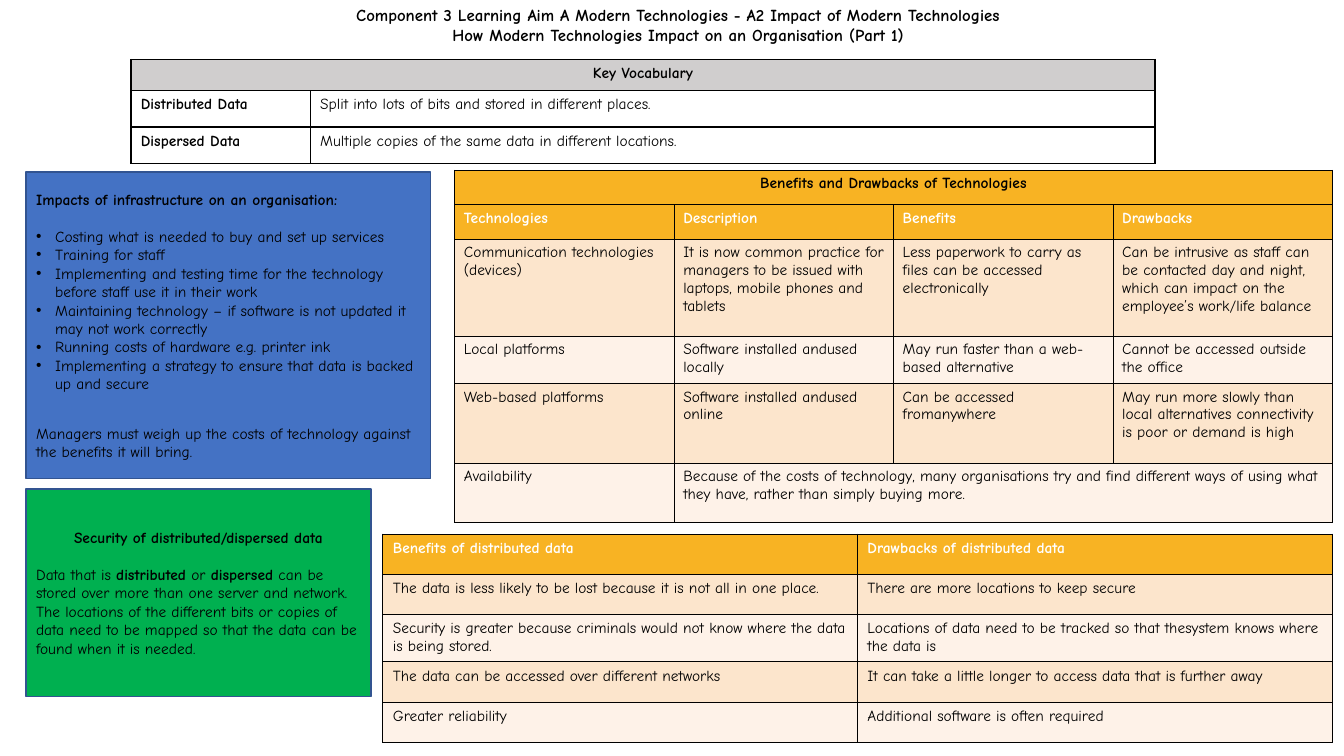
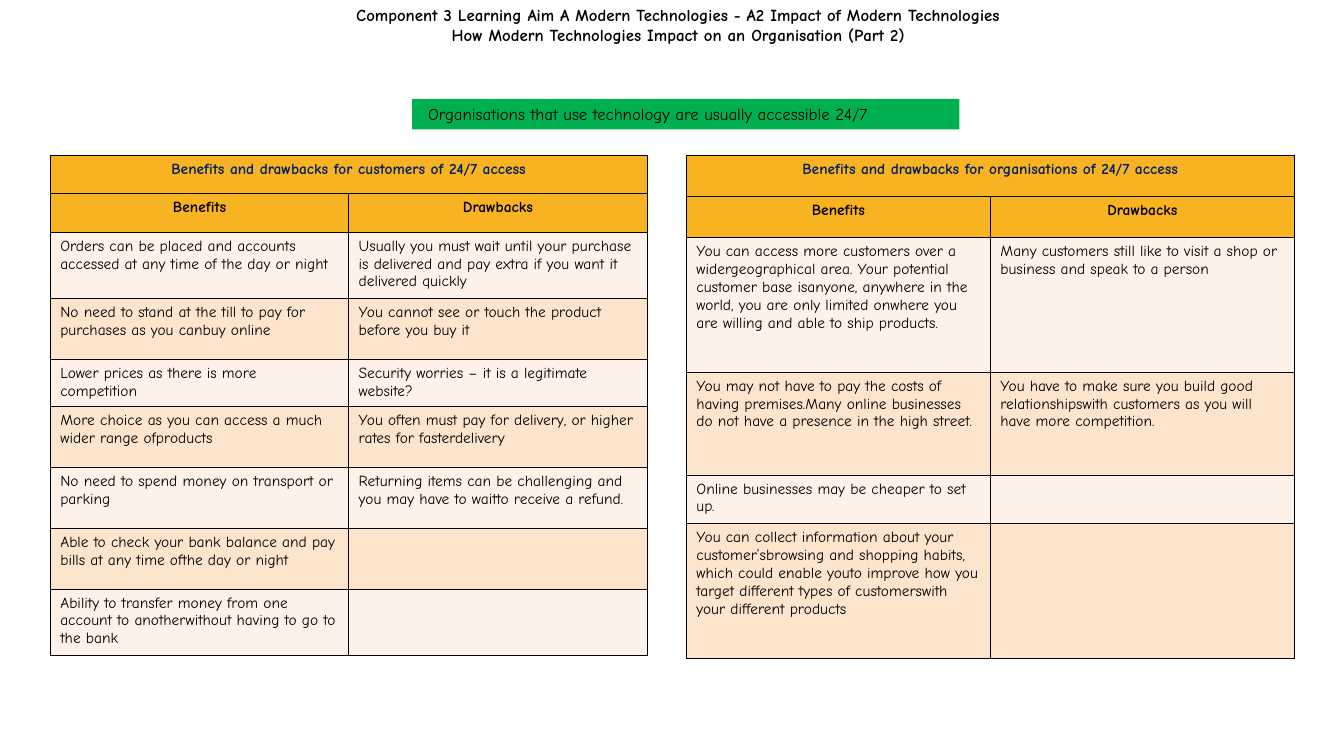
from collections import namedtuple

from lxml.etree import SubElement
from pptx import Presentation
from pptx.dml.color import RGBColor
from pptx.enum.shapes import MSO_SHAPE
from pptx.enum.text import MSO_ANCHOR, PP_ALIGN
from pptx.oxml import parse_xml
from pptx.oxml.ns import nsdecls, qn
from pptx.util import Cm, Pt

FONT = "Comic Neue"
TITLE_SIZE = 12
BODY_SIZE = 11

BLACK = RGBColor(0x00, 0x00, 0x00)
WHITE = RGBColor(0xFF, 0xFF, 0xFF)
NAVY = RGBColor(0x00, 0x20, 0x60)
GREY = RGBColor(0xD0, 0xCE, 0xCE)
AMBER = RGBColor(0xF8, 0xB3, 0x23)
PEACH = RGBColor(0xFC, 0xE5, 0xCC)
CREAM = RGBColor(0xFE, 0xF2, 0xE8)
BLUE = RGBColor(0x44, 0x72, 0xC4)
GREEN = RGBColor(0x00, 0xB0, 0x50)
OUTLINE = RGBColor(0x32, 0x54, 0x91)

RowStyle = namedtuple("RowStyle", "fill colour bold centred")
VOCABULARY_HEADING = RowStyle(GREY, BLACK, True, True)
BLACK_HEADING = RowStyle(AMBER, BLACK, True, True)
NAVY_HEADING = RowStyle(AMBER, NAVY, True, True)
WHITE_HEADING = RowStyle(AMBER, WHITE, True, False)
PLAIN_ROW = RowStyle(WHITE, BLACK, False, False)
PEACH_ROW = RowStyle(PEACH, BLACK, False, False)
CREAM_ROW = RowStyle(CREAM, BLACK, False, False)

VOCABULARY = [
    ["Key Vocabulary"],
    ["*Distributed Data*", "Split into lots of bits and stored in different places."],
    ["*Dispersed Data*", "Multiple copies of the same data in different locations."],
]
INFRASTRUCTURE_IMPACTS = [
    "Costing what is needed to buy and set up services",
    "Training for staff",
    "Implementing and testing time for the technology before staff use it in their work",
    "Maintaining technology – if software is not updated it may not work correctly",
    "Running costs of hardware e.g. printer ink",
    "Implementing a strategy to ensure that data is backed up and secure",
]
TECHNOLOGIES = [
    ["Benefits and Drawbacks of Technologies"],
    ["Technologies", "Description", "Benefits", "Drawbacks"],
    ["Communication technologies (devices)",
     "It is now common practice for managers to be issued with laptops, "
     "mobile phones and tablets",
     "Less paperwork to carry as files can be accessed electronically",
     "Can be intrusive as staff can be contacted day and night, which can "
     "impact on the employee’s work/life balance"],
    ["Local platforms", "Software installed andused locally",
     "May run faster than a web-based alternative",
     "Cannot be accessed outside the office"],
    ["Web-based platforms", "Software installed andused online",
     "Can be accessed fromanywhere",
     "May run more slowly than local alternatives connectivity is poor or "
     "demand is high"],
    ["Availability",
     "Because of the costs of technology, many organisations try and find "
     "different ways of using what they have, rather than simply buying more."],
]
DISTRIBUTED_DATA = [
    ["Benefits of distributed data", "Drawbacks of distributed data"],
    ["The data is less likely to be lost because it is not all in one place.",
     "There are more locations to keep secure"],
    ["Security is greater because criminals would not know where the data is "
     "being stored.",
     "Locations of data need to be tracked so that thesystem knows where the data is"],
    ["The data can be accessed over different networks",
     "It can take a little longer to access data that is further away"],
    ["Greater reliability", "Additional software is often required"],
]
CUSTOMERS = [
    ["Benefits and drawbacks for customers of 24/7 access"],
    ["Benefits", "Drawbacks"],
    ["Orders can be placed and accounts accessed at any time of the day or night",
     "Usually you must wait until your purchase is delivered and pay extra if "
     "you want it delivered quickly"],
    ["No need to stand at the till to pay for purchases as you canbuy online",
     "You cannot see or touch the product before you buy it"],
    ["Lower prices as there is more competition",
     "Security worries – it is a legitimate website?"],
    ["More choice as you can access a much wider range ofproducts",
     "You often must pay for delivery, or higher rates for fasterdelivery"],
    ["No need to spend money on transport or parking",
     "Returning items can be challenging and you may have to waitto receive a refund."],
    ["Able to check your bank balance and pay bills at any time ofthe day or night", ""],
    ["Ability to transfer money from one account to anotherwithout having to go "
     "to the bank", ""],
]
ORGANISATIONS = [
    ["Benefits and drawbacks for organisations of 24/7 access"],
    ["Benefits", "Drawbacks"],
    ["You can access more customers over a widergeographical area. Your potential "
     "customer base isanyone, anywhere in the world, you are only limited onwhere "
     "you are willing and able to ship products.",
     "Many customers still like to visit a shop or business and speak to a person"],
    ["You may not have to pay the costs of having premises.Many online businesses "
     "do not have a presence in the high street.",
     "You have to make sure you build good relationshipswith customers as you will "
     "have more competition."],
    ["Online businesses may be cheaper to set up.", ""],
    ["You can collect information about your customer’sbrowsing and shopping habits, "
     "which could enable youto improve how you target different types of "
     "customerswith your different products", ""],
]


def write_paragraph(paragraph, text, size=BODY_SIZE, colour=BLACK, bold=False,
                    centred=False):
    """Write text in which *asterisks* enclose bold words."""
    paragraph.alignment = PP_ALIGN.CENTER if centred else PP_ALIGN.LEFT
    for index, part in enumerate(text.split("*")):
        if part:
            run = paragraph.add_run()
            run.text = part
            run.font.name = FONT
            run.font.size = Pt(size)
            run.font.color.rgb = colour
            run.font.bold = bold or index % 2 == 1


def add_bullet(paragraph):
    properties = paragraph._p.get_or_add_pPr()
    properties.set("marL", str(Cm(0.48)))
    properties.set("indent", str(-Cm(0.48)))
    SubElement(properties, qn("a:buFont")).set("typeface", "Arial")
    SubElement(properties, qn("a:buChar")).set("char", "•")


def add_title(slide, part):
    box = slide.shapes.add_textbox(Cm(0.33), Cm(0), Cm(33.53), Cm(1.27))
    text_frame = box.text_frame
    text_frame.word_wrap = True
    text_frame.vertical_anchor = MSO_ANCHOR.MIDDLE
    write_paragraph(
        text_frame.paragraphs[0],
        "Component 3 Learning Aim A Modern Technologies - A2 Impact of Modern Technologies",
        TITLE_SIZE, bold=True, centred=True)
    write_paragraph(
        text_frame.add_paragraph(),
        f"How Modern Technologies Impact on an Organisation (Part {part})",
        TITLE_SIZE, bold=True, centred=True)


def add_panel(slide, left, top, width, height, fill, outlined=True):
    """Add a filled rectangle and return its text frame."""
    shape = slide.shapes.add_shape(
        MSO_SHAPE.RECTANGLE, Cm(left), Cm(top), Cm(width), Cm(height))
    shape.shadow.inherit = False
    shape.fill.solid()
    shape.fill.fore_color.rgb = fill
    if outlined:
        shape.line.color.rgb = OUTLINE
        shape.line.width = Pt(1)
    else:
        shape.line.fill.background()
    shape.text_frame.word_wrap = True
    shape.text_frame.vertical_anchor = MSO_ANCHOR.MIDDLE
    return shape.text_frame


def set_borders(cell, points):
    properties = cell._tc.get_or_add_tcPr()
    for index, side in enumerate(("lnL", "lnR", "lnT", "lnB")):
        properties.insert(index, parse_xml(
            f'<a:{side} {nsdecls("a")} w="{Pt(points)}"><a:solidFill>'
            f'<a:srgbClr val="{BLACK}"/></a:solidFill></a:{side}>'))


def add_grid(slide, left, top, column_widths, row_heights, rows, styles,
             border=0.75, margins=(0.25, 0.13)):
    """Add a table; the last text of a short row spans the remaining columns."""
    table = slide.shapes.add_table(
        len(rows), len(column_widths), Cm(left), Cm(top),
        Cm(sum(column_widths)), Cm(sum(row_heights))).table
    table.first_row = table.horz_banding = False
    for column, width in zip(table.columns, column_widths):
        column.width = Cm(width)
    for row, height, texts, style in zip(table.rows, row_heights, rows, styles):
        row.height = Cm(height)
        cells = list(row.cells)
        for cell in cells:
            cell.fill.solid()
            cell.fill.fore_color.rgb = style.fill
            set_borders(cell, border)
            cell.margin_left = cell.margin_right = Cm(margins[0])
            cell.margin_top = cell.margin_bottom = Cm(margins[1])
        if len(texts) < len(cells):
            cells[len(texts) - 1].merge(cells[-1])
        for cell, text in zip(cells, texts):
            write_paragraph(cell.text_frame.paragraphs[0], text, colour=style.colour,
                            bold=style.bold, centred=style.centred)


def add_infrastructure_panel(slide):
    text_frame = add_panel(slide, 0.66, 4.34, 10.19, 7.72, BLUE)
    heading = text_frame.paragraphs[0]
    write_paragraph(heading, "Impacts of infrastructure on an organisation:", bold=True)
    heading.space_after = Pt(13)
    for impact in INFRASTRUCTURE_IMPACTS:
        paragraph = text_frame.add_paragraph()
        write_paragraph(paragraph, impact)
        add_bullet(paragraph)
    conclusion = text_frame.add_paragraph()
    write_paragraph(conclusion, "Managers must weigh up the costs of technology against "
                                "the benefits it will bring.")
    conclusion.space_before = Pt(22)


def add_security_panel(slide):
    text_frame = add_panel(slide, 0.66, 12.32, 8.69, 5.23, GREEN)
    heading = text_frame.paragraphs[0]
    write_paragraph(heading, "Security of distributed/dispersed data",
                    bold=True, centred=True)
    heading.space_after = Pt(13)
    for text in (
            "Data that is *distributed* or *dispersed* can be stored over more than one "
            "server and network.",
            "The locations of the different bits or copies of data need to be mapped so "
            "that the data can be found when it is needed."):
        write_paragraph(text_frame.add_paragraph(), text)


def add_access_banner(slide):
    text_frame = add_panel(slide, 10.39, 2.49, 13.79, 0.77, GREEN, outlined=False)
    text_frame.margin_left = Cm(0.4)
    write_paragraph(text_frame.paragraphs[0],
                    "Organisations that use technology are usually accessible 24/7",
                    TITLE_SIZE)


def main():
    presentation = Presentation()
    presentation.slide_width = Cm(33.87)
    presentation.slide_height = Cm(19.05)
    slides = []
    for part in (1, 2):
        slide = presentation.slides.add_slide(presentation.slide_layouts[6])
        add_title(slide, part)
        slides.append(slide)
    impact_slide, access_slide = slides

    add_grid(impact_slide, 3.3, 1.5, [4.52, 21.29], [0.79, 0.91, 0.91], VOCABULARY,
             [VOCABULARY_HEADING] + [PLAIN_ROW] * 2, border=1)
    add_infrastructure_panel(impact_slide)
    add_grid(impact_slide, 11.46, 4.29, [5.53] * 4, [0.87, 0.87, 2.44, 1.2, 2.01, 1.49],
             TECHNOLOGIES, [BLACK_HEADING, WHITE_HEADING] + [PEACH_ROW, CREAM_ROW] * 2,
             margins=(0.23, 0.11))
    add_security_panel(impact_slide)
    add_grid(impact_slide, 9.65, 13.46, [11.96] * 2, [1.01, 1.01, 1.2, 1.01, 1.01],
             DISTRIBUTED_DATA, [WHITE_HEADING] + [PEACH_ROW, CREAM_ROW] * 2)

    access_styles = [NAVY_HEADING, BLACK_HEADING] + [CREAM_ROW, PEACH_ROW] * 4
    add_access_banner(access_slide)
    add_grid(access_slide, 1.27, 3.91, [7.52] * 2,
             [0.97, 0.97, 1.68, 1.53, 1.19, 1.53, 1.53, 1.53, 1.68],
             CUSTOMERS, access_styles)
    add_grid(access_slide, 17.3, 3.91, [7.66] * 2, [1.04, 1.04, 3.39, 2.59, 1.23, 3.39],
             ORGANISATIONS, access_styles)
    presentation.save("out.pptx")


if __name__ == "__main__":
    main()
